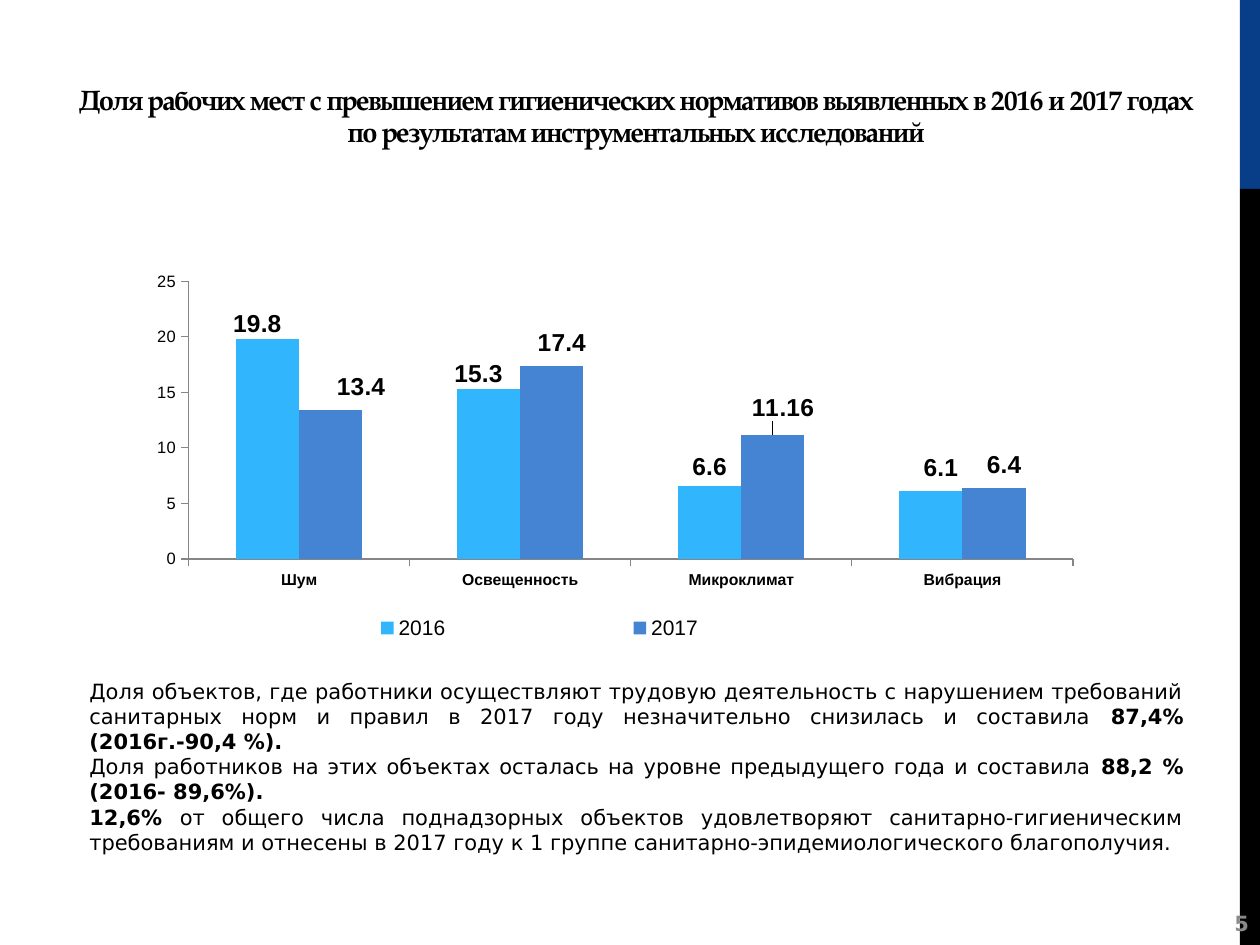
from dataclasses import dataclass

from lxml import etree
from pptx import Presentation
from pptx.chart.data import CategoryChartData
from pptx.dml.color import RGBColor
from pptx.enum.chart import XL_CHART_TYPE, XL_LABEL_POSITION, XL_LEGEND_POSITION, XL_TICK_MARK
from pptx.enum.shapes import MSO_SHAPE
from pptx.enum.text import MSO_ANCHOR, PP_ALIGN
from pptx.oxml.ns import qn
from pptx.util import Pt


@dataclass(frozen=True)
class Theme:
    ink: str = "000000"
    navy: str = "073E87"
    grey: str = "898989"
    axis: str = "868686"
    series: tuple = ("31B6FD", "4584D3")
    serif: str = "TeX Gyre Pagella"
    sans: str = "DejaVu Sans"
    chart_font: str = "Arial"
    title: float = 16
    body: float = 12
    value: float = 14
    axis_text: float = 9.4
    category: float = 9


def set_layout(parent, index, **values):
    """Give a chart part a manual layout as fractions of the chart."""
    for old in parent.findall(qn("c:layout")):
        parent.remove(old)
    layout = etree.Element(qn("c:layout"))
    manual = etree.SubElement(layout, qn("c:manualLayout"))
    for name, value in values.items():
        etree.SubElement(manual, qn(f"c:{name}")).set("val", str(value))
    parent.insert(index, layout)


class SlideBuilder:
    def __init__(self, s, theme):
        self.s = s
        self.theme = theme

    def style_font(self, font, size, color, bold=False, name=None):
        font.size = Pt(size)
        font.bold = bold
        font.color.rgb = RGBColor.from_string(color)
        font.name = name or self.theme.chart_font

    def bar(self, x, y, w, h, color):
        sp = self.s.shapes.add_shape(MSO_SHAPE.RECTANGLE, Pt(x), Pt(y), Pt(w), Pt(h))
        sp.shadow.inherit = False
        sp.fill.solid()
        sp.fill.fore_color.rgb = RGBColor.from_string(color)
        sp.line.fill.background()

    def text(self, box, paragraphs, size, font, color=None, align=PP_ALIGN.CENTER,
             anchor=MSO_ANCHOR.MIDDLE, inset=7.2, leading=None, tracking=0):
        """Each paragraph is a list of (text, bold) runs."""
        tf = self.s.shapes.add_textbox(*map(Pt, box)).text_frame
        tf.word_wrap = True
        tf.vertical_anchor = anchor
        tf.margin_left = tf.margin_right = Pt(inset)
        for i, runs in enumerate(paragraphs):
            p = tf.add_paragraph() if i else tf.paragraphs[0]
            p.alignment = align
            if leading:
                p.line_spacing = Pt(leading)
            for words, bold in runs:
                r = p.add_run()
                r.text = words
                self.style_font(r.font, size, color or self.theme.ink, bold, font)
                if tracking:
                    r.font._element.set("spc", str(tracking))

    def column_chart(self, box, categories, series, label_shifts, plot, legend):
        t = self.theme
        data = CategoryChartData()
        data.categories = categories
        for name, values in series.items():
            data.add_series(name, values)
        chart = self.s.shapes.add_chart(
            XL_CHART_TYPE.COLUMN_CLUSTERED, *map(Pt, box), data).chart
        chart.has_title = False
        self.style_font(chart.font, t.axis_text, t.ink)
        self.axes(chart)

        chart.has_legend = True
        chart.legend.position = XL_LEGEND_POSITION.BOTTOM
        chart.legend.include_in_layout = False
        self.style_font(chart.legend.font, t.body, t.ink)
        set_layout(chart.legend._element, 1, xMode="edge", yMode="edge", **legend)
        set_layout(chart._chartSpace.chart.plotArea, 0, layoutTarget="inner",
                   xMode="edge", yMode="edge", **plot)

        columns = chart.plots[0]
        columns.gap_width = 150
        columns.overlap = 0
        columns.vary_by_categories = False
        for ser, color, shifts in zip(columns.series, t.series, label_shifts):
            ser.format.fill.solid()
            ser.format.fill.fore_color.rgb = RGBColor.from_string(color)
            labels = ser.data_labels
            labels.show_value = True
            labels.position = XL_LABEL_POSITION.OUTSIDE_END
            self.style_font(labels.font, t.value, t.ink, True)
            for i, (dx, dy) in enumerate(shifts):
                label = ser.points[i].data_label
                self.style_font(label.font, t.value, t.ink, True)
                label.position = XL_LABEL_POSITION.OUTSIDE_END
                set_layout(labels._element.findall(qn("c:dLbl"))[i], 1, x=dx, y=dy)

    def axes(self, chart):
        t = self.theme
        for axis in (chart.category_axis, chart.value_axis):
            axis.has_major_gridlines = False
            axis.major_tick_mark = XL_TICK_MARK.OUTSIDE
            axis.format.line.color.rgb = RGBColor.from_string(t.axis)
        self.style_font(chart.category_axis.tick_labels.font, t.category, t.ink, True)
        self.style_font(chart.value_axis.tick_labels.font, t.axis_text, t.ink)
        chart.value_axis.minimum_scale = 0
        chart.value_axis.maximum_scale = 25
        chart.value_axis.major_unit = 5


def main():
    prs = Presentation()
    prs.slide_width, prs.slide_height = Pt(720), Pt(540)
    t = Theme()
    b = SlideBuilder(prs.slides.add_slide(prs.slide_layouts[6]), t)

    b.bar(708.5, 0, 11.5, 108, t.navy)
    b.bar(708.5, 108, 11.5, 432, t.ink)
    b.text((699, 515.5, 21, 24.5), [[("5", True)]], t.body, t.sans, t.grey, inset=0)

    b.column_chart(
        (50.4, 140.4, 579.6, 236.2),
        ["Шум", "Освещенность", "Микроклимат", "Вибрация"],
        {"2016": (19.8, 15.3, 6.6, 6.1), "2017": (13.4, 17.4, 11.16, 6.4)},
        label_shifts=[
            [(-0.01, 0.01), (-0.01, 0.01), (0, 0), (0.01, -0.01)],
            [(0.03, -0.01), (0.01, -0.01), (0.01, -0.02), (0.01, -0.01)],
        ],
        plot={"x": 0.099, "y": 0.086, "w": 0.872, "h": 0.672},
        legend={"x": 0.11, "y": 0.88, "w": 0.67, "h": 0.09},
    )

    b.text(
        (33, 19.5, 661, 93.5),
        [[("Доля рабочих мест с превышением гигиенических нормативов выявленных "
           "в 2016 и 2017 годах по результатам инструментальных исследований", True)]],
        t.title, t.serif, leading=18.5, tracking=-60,
    )
    b.text(
        (44, 384, 639.5, 108.5),
        [
            [("Доля объектов, где работники осуществляют трудовую деятельность с "
              "нарушением требований санитарных норм и правил в 2017 году "
              "незначительно снизилась и составила ", False),
             ("87,4% (2016г.-90,4 %).", True)],
            [("Доля работников на этих объектах осталась на уровне предыдущего года "
              "и составила ", False),
             ("88,2 % (2016- 89,6%).", True)],
            [("12,6% ", True),
             ("от общего числа поднадзорных объектов удовлетворяют "
              "санитарно-гигиеническим требованиям и отнесены в 2017 году к 1 группе "
              "санитарно-эпидемиологического благополучия.", False)],
        ],
        t.body, t.sans, align=PP_ALIGN.JUSTIFY, anchor=MSO_ANCHOR.TOP,
    )

    prs.save("out.pptx")


if __name__ == "__main__":
    main()
